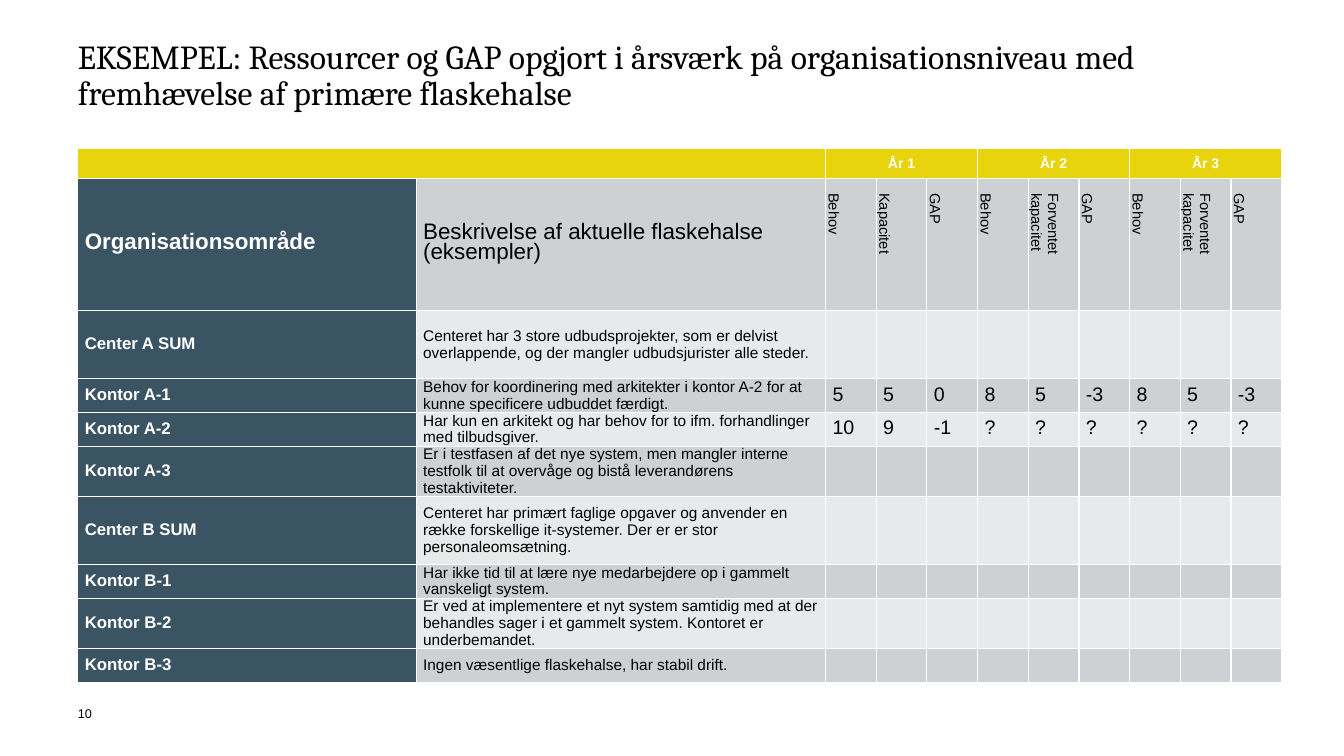
from pptx import Presentation
from pptx.dml.color import RGBColor
from pptx.enum import text
from pptx.util import Pt

COLORS = {
    "yellow": "E8D40D", "navy": "3B5463", "dark": "CED1D3",
    "light": "E8E9EA", "white": "FFFFFF", "black": "000000",
}
TITLE = ("EKSEMPEL: Ressourcer og GAP opgjort i årsværk på organisationsniveau "
         "med fremhævelse af primære flaskehalse")
PAGE_NUMBER = "10"
YEARS = ["År 1", "År 2", "År 3"]
AREA_HEADING = "Organisationsområde"
BOTTLENECK_HEADING = "Beskrivelse af aktuelle flaskehalse (eksempler)"
MEASURES = ["Behov", "Kapacitet", "GAP"] + ["Behov", "Forventet kapacitet", "GAP"] * 2
# area, bottleneck, figures, row height
AREAS = [
    ("Center A SUM", "Centeret har 3 store udbudsprojekter, som er delvist overlappende, "
     "og der mangler udbudsjurister alle steder.", [], 48.5),
    ("Kontor A-1", "Behov for koordinering med arkitekter i kontor A-2 for at kunne "
     "specificere udbuddet færdigt.", ["5", "5", "0", "8", "5", "-3", "8", "5", "-3"], 24.2),
    ("Kontor A-2", "Har kun en arkitekt og har behov for to ifm. forhandlinger med "
     "tilbudsgiver.", ["10", "9", "-1"] + ["?"] * 6, 24.2),
    ("Kontor A-3", "Er i testfasen af det nye system, men mangler interne testfolk til at "
     "overvåge og bistå leverandørens testaktiviteter.", [], 36),
    ("Center B SUM", "Centeret har primært faglige opgaver og anvender en række forskellige "
     "it-systemer. Der er er stor personaleomsætning.", [], 48.5),
    ("Kontor B-1", "Har ikke tid til at lære nye medarbejdere op i gammelt vanskeligt "
     "system.", [], 24.2),
    ("Kontor B-2", "Er ved at implementere et nyt system samtidig med at der behandles sager "
     "i et gammelt system. Kontoret er underbemandet.", [], 36),
    ("Kontor B-3", "Ingen væsentlige flaskehalse, har stabil drift.", [], 24.2),
]
LEFT, TABLE_TOP = 55.6, 105.8
COLUMN_WIDTHS = [241.7, 292.4] + [36.2] * len(MEASURES)
ROW_HEIGHTS = [18.7, 73.5] + [area[3] for area in AREAS]


def write(paragraph, content, size, color="black", name="Arial", bold=False):
    run = paragraph.add_run()
    run.text = content
    for attribute, value in {"size": Pt(size), "name": name, "bold": bold}.items():
        setattr(run.font, attribute, value)
    run.font.color.rgb = RGBColor.from_string(COLORS[color])


def add_label(slide, content, top, width, height, size, name="Arial", spacing=1.0):
    box = slide.shapes.add_textbox(Pt(LEFT), Pt(top), Pt(width), Pt(height))
    frame = box.text_frame
    for side in ("left", "top", "right", "bottom"):
        setattr(frame, f"margin_{side}", 0)
    frame.word_wrap = True
    paragraph = frame.paragraphs[0]
    paragraph.line_spacing = spacing
    write(paragraph, content, size, name=name)


def fill_cell(cell, fill, content="", size=10, spacing=12, vertical=False,
              centred=False, **font):
    cell.fill.solid()
    cell.fill.fore_color.rgb = RGBColor.from_string(COLORS[fill])
    layout = {"margin_left": Pt(5), "margin_right": Pt(5), "margin_top": 0,
              "margin_bottom": 0, "vertical_anchor": text.MSO_ANCHOR.MIDDLE}
    for attribute, value in layout.items():
        setattr(cell, attribute, value)
    paragraph = cell.text_frame.paragraphs[0]
    paragraph.line_spacing = Pt(spacing)
    if centred:
        paragraph.alignment = text.PP_ALIGN.CENTER
    if vertical:
        cell._tc.get_or_add_tcPr().set("vert", "vert")
        paragraph._p.get_or_add_pPr().set("marL", str(Pt(5.65)))
    if content:
        write(paragraph, content, size, **font)


def add_resource_table(slide):
    frame = slide.shapes.add_table(
        len(ROW_HEIGHTS), len(COLUMN_WIDTHS), Pt(LEFT), Pt(TABLE_TOP),
        Pt(sum(COLUMN_WIDTHS)), Pt(sum(ROW_HEIGHTS)))
    table = frame.table
    for column, width in zip(table.columns, COLUMN_WIDTHS):
        column.width = Pt(width)
    for row, height in zip(table.rows, ROW_HEIGHTS):
        row.height = Pt(height)

    for cell in table.rows[0].cells:
        fill_cell(cell, "yellow")
    table.cell(0, 0).merge(table.cell(0, 1))
    for index, year in enumerate(YEARS):
        first = 2 + 3 * index
        table.cell(0, first).merge(table.cell(0, first + 2))
        fill_cell(table.cell(0, first), "yellow", year, centred=True,
                  color="white", bold=True)

    fill_cell(table.cell(1, 0), "navy", AREA_HEADING, 16, 14, color="white", bold=True)
    fill_cell(table.cell(1, 1), "dark", BOTTLENECK_HEADING, 16, 14)
    for column, measure in enumerate(MEASURES, 2):
        fill_cell(table.cell(1, column), "dark", measure, 10.5, vertical=True)

    for row, (area, bottleneck, figures, _) in enumerate(AREAS, 2):
        band = "dark" if row % 2 else "light"
        fill_cell(table.cell(row, 0), "navy", area, 12, color="white", bold=True)
        fill_cell(table.cell(row, 1), band, bottleneck, 11)
        for column, figure in enumerate(figures or [""] * len(MEASURES), 2):
            fill_cell(table.cell(row, column), band, figure, 14, 14)


def main():
    presentation = Presentation()
    presentation.slide_width, presentation.slide_height = Pt(960), Pt(540)
    slide = presentation.slides.add_slide(presentation.slide_layouts[6])
    add_label(slide, TITLE, 28.8, 849.6, 73.4, 24, name="Cambria", spacing=0.9)
    add_resource_table(slide)
    add_label(slide, PAGE_NUMBER, 504, 22.3, 21.6, 9)
    presentation.save("out.pptx")


if __name__ == "__main__":
    main()
